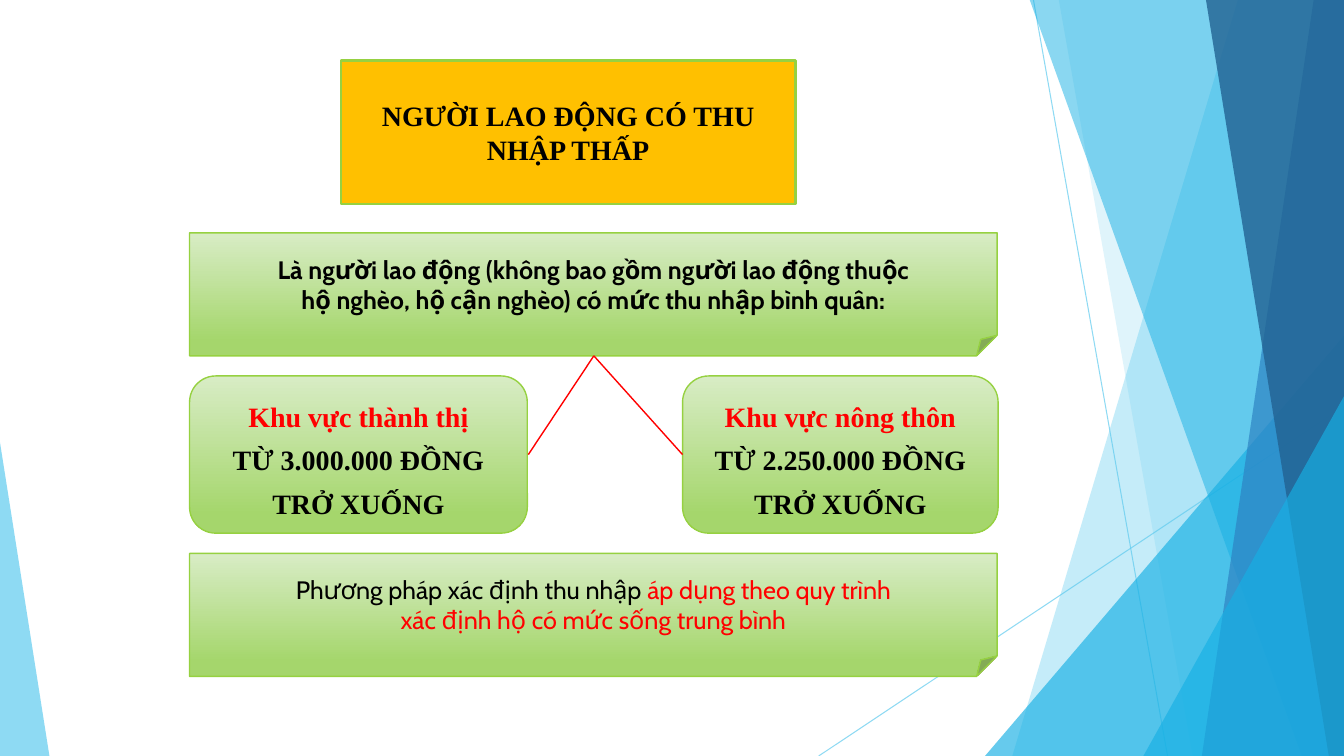
from dataclasses import dataclass

import lxml.etree
import pptx
import pptx.dml.color
import pptx.enum.shapes
import pptx.enum.text
import pptx.oxml.ns
import pptx.util

Inches = pptx.util.Inches
Preset = pptx.enum.shapes.MSO_SHAPE
qn = pptx.oxml.ns.qn


@dataclass(frozen=True)
class Theme:
    sky: str = "5FCBEF"
    azure: str = "17B0E4"
    blue: str = "2E83C3"
    navy: str = "226292"
    gold: str = "FFC000"
    outline: str = "96D141"
    light_green: str = "D8ECC5"
    green: str = "A5D66C"
    red: str = "FF0000"
    black: str = "000000"
    serif: str = "Times New Roman"
    sans: str = "Cabin"
    large: int = 20
    medium: int = 18


THEME = Theme()


@dataclass(frozen=True)
class Frame:
    left: float
    top: float
    width: float
    height: float

    def lengths(self) -> list:
        return [Inches(value) for value in (self.left, self.top, self.width, self.height)]


@dataclass(frozen=True)
class Line:
    start: tuple
    end: tuple
    color: str
    width: float
    opacity: int = 100


@dataclass(frozen=True)
class Polygon:
    points: tuple
    color: str
    opacity: int


@dataclass(frozen=True)
class Triangle:
    frame: Frame
    apex: float
    color: str
    opacity: int


@dataclass(frozen=True)
class Run:
    text: str
    color: str = THEME.black


@dataclass(frozen=True)
class Box:
    preset: Preset
    frame: Frame
    paragraphs: tuple
    font: dict
    line_spacing: float = 1.0
    wrap: bool = True


SERIF = {"name": THEME.serif, "size": pptx.util.Pt(THEME.large), "bold": True}
SANS = {"name": THEME.sans, "size": pptx.util.Pt(THEME.medium), "bold": False}
SANS_BOLD = SANS | {"bold": True}

EDGE, TOP, BOTTOM = 13.33, -0.01, 7.5
LEFT, WIDTH = 1.88, 8.01
AREA_TOP, AREA_HEIGHT = 3.73, 1.56
FORK = (5.89, 3.53)
FORK_BOTTOM = AREA_TOP + AREA_HEIGHT / 2


def edge_facet(top_left: float, bottom_left: float, color: str, opacity: int) -> Polygon:
    """Describe a full-height facet that reaches the right edge of the slide."""
    points = ((top_left, TOP), (EDGE, TOP), (EDGE, BOTTOM), (bottom_left, BOTTOM))
    return Polygon(points, color, opacity)


BACKDROP_LINES = (
    Line((10.25, 0), (11.58, BOTTOM), THEME.sky, 0.75, 70),
    Line((EDGE, 4.03), (8.12, BOTTOM), THEME.sky, 0.75, 70),
)
FACETS = (
    edge_facet(12.28, 10.04, THEME.sky, 36),
    edge_facet(10.5, 11.83, THEME.sky, 20),
    Triangle(Frame(9.77, 3.33, 3.56, 4.17), 1, THEME.azure, 66),
    edge_facet(10.21, 12.91, THEME.azure, 50),
    edge_facet(13.03, 11.92, THEME.blue, 70),
    edge_facet(11.96, 13.18, THEME.navy, 80),
    Triangle(Frame(11.34, 3.93, 1.99, 3.57), 1, THEME.azure, 66),
    Triangle(Frame(0, 4.39, 0.49, 3.11), 0, THEME.sky, 70),
)
TITLE = ((Run("NGƯỜI LAO ĐỘNG CÓ THU NHẬP THẤP"),),)
TITLE_FRAME = Frame(3.38, 0.6, 4.51, 1.42)


def area_box(left: float, width: float, area: str, income: str) -> Box:
    paragraphs = ((Run(area, THEME.red),), (Run(income),), (Run("TRỞ XUỐNG"),))
    frame = Frame(left, AREA_TOP, width, AREA_HEIGHT)
    return Box(Preset.ROUNDED_RECTANGLE, frame, paragraphs, SERIF, 1.3, False)


def note_box(top: float, paragraphs: tuple, font: dict) -> Box:
    return Box(Preset.FOLDED_CORNER, Frame(LEFT, top, WIDTH, 1.22), paragraphs, font)


BOXES = (
    note_box(2.31, (
        (Run("Là người lao động (không bao gồm người lao động thuộc"),),
        (Run("hộ nghèo, hộ cận nghèo) có mức thu nhập bình quân:"),),
    ), SANS_BOLD),
    area_box(LEFT, 3.35, "Khu vực thành thị", "TỪ 3.000.000 ĐỒNG"),
    area_box(6.77, 3.13, "Khu vực nông thôn", "TỪ 2.250.000 ĐỒNG"),
    note_box(5.49, (
        (Run("Phương pháp xác định thu nhập "), Run("áp dụng theo quy trình", THEME.red)),
        (Run("xác định hộ có mức sống trung bình", THEME.red),),
    ), SANS),
)
FORK_LINES = tuple(Line(FORK, (x, FORK_BOTTOM), THEME.red, 1) for x in (5.24, 6.77))


def rgb(color: str) -> pptx.dml.color.RGBColor:
    return pptx.dml.color.RGBColor.from_string(color)


def set_format(target, values: dict) -> None:
    for name, value in values.items():
        setattr(target, name, value)


def set_opacity(shape, percent: int) -> None:
    for color in shape._element.spPr.iter(qn("a:srgbClr")):
        lxml.etree.SubElement(color, qn("a:alpha"), val=str(percent * 1000))


def set_outline(shape, color: str, width: float) -> None:
    shape.line.color.rgb = rgb(color)
    shape.line.width = pptx.util.Pt(width)


def draw_line(slide, line: Line) -> None:
    ends = [Inches(value) for value in (*line.start, *line.end)]
    connector = slide.shapes.add_connector(pptx.enum.shapes.MSO_CONNECTOR.STRAIGHT, *ends)
    set_outline(connector, line.color, line.width)
    set_opacity(connector, line.opacity)
    lxml.etree.SubElement(connector._element.spPr, qn("a:effectLst"))


def draw_facet(slide, facet: Polygon | Triangle) -> None:
    if isinstance(facet, Triangle):
        shape = slide.shapes.add_shape(Preset.ISOSCELES_TRIANGLE, *facet.frame.lengths())
        shape.adjustments[0] = facet.apex
    else:
        start, *others = [(Inches(x), Inches(y)) for x, y in facet.points]
        builder = slide.shapes.build_freeform(*start)
        builder.add_line_segments(others, close=True)
        shape = builder.convert_to_shape()
    shape.shadow.inherit = False
    shape.fill.solid()
    shape.fill.fore_color.rgb = rgb(facet.color)
    shape.line.fill.background()
    set_opacity(shape, facet.opacity)


def write_text(shape, paragraphs: tuple, font: dict, line_spacing: float, wrap: bool) -> None:
    frame = shape.text_frame
    set_format(frame, {
        "word_wrap": wrap,
        "auto_size": pptx.enum.text.MSO_AUTO_SIZE.NONE,
        "vertical_anchor": pptx.enum.text.MSO_ANCHOR.MIDDLE,
    })
    for index, runs in enumerate(paragraphs):
        paragraph = frame.add_paragraph() if index else frame.paragraphs[0]
        set_format(paragraph, {
            "alignment": pptx.enum.text.PP_ALIGN.CENTER, "line_spacing": line_spacing})
        for item in runs:
            run = paragraph.add_run()
            run.text = item.text
            set_format(run.font, font)
            run.font.color.rgb = rgb(item.color)


def draw_box(slide, box: Box) -> None:
    shape = slide.shapes.add_shape(box.preset, *box.frame.lengths())
    shape.shadow.inherit = False
    shape.fill.gradient()
    shape.fill.gradient_angle = 270
    stops = ((0, THEME.light_green), (0.88, THEME.green))
    for stop, (position, color) in zip(shape.fill.gradient_stops, stops):
        stop.position = position
        stop.color.rgb = rgb(color)
    set_outline(shape, THEME.outline, 1)
    write_text(shape, box.paragraphs, box.font, box.line_spacing, box.wrap)


def draw_title(slide) -> None:
    """Turn the title placeholder into a gold ellipse."""
    title = slide.shapes.title
    set_format(title, dict(zip(("left", "top", "width", "height"), TITLE_FRAME.lengths())))
    geometry = lxml.etree.SubElement(title._element.spPr, qn("a:prstGeom"), prst="ellipse")
    lxml.etree.SubElement(geometry, qn("a:avLst"))
    title.fill.solid()
    title.fill.fore_color.rgb = rgb(THEME.gold)
    set_outline(title, THEME.outline, 1.5)
    write_text(title, TITLE, SERIF, 1.0, True)


def main() -> None:
    presentation = pptx.Presentation()
    set_format(presentation, {"slide_width": Inches(EDGE), "slide_height": Inches(BOTTOM)})
    slide = presentation.slides.add_slide(presentation.slide_layouts.get_by_name("Title Only"))
    for line in BACKDROP_LINES:
        draw_line(slide, line)
    for facet in FACETS:
        draw_facet(slide, facet)
    draw_title(slide)
    for box in BOXES:
        draw_box(slide, box)
    for line in FORK_LINES:
        draw_line(slide, line)
    presentation.save("out.pptx")


if __name__ == "__main__":
    main()
